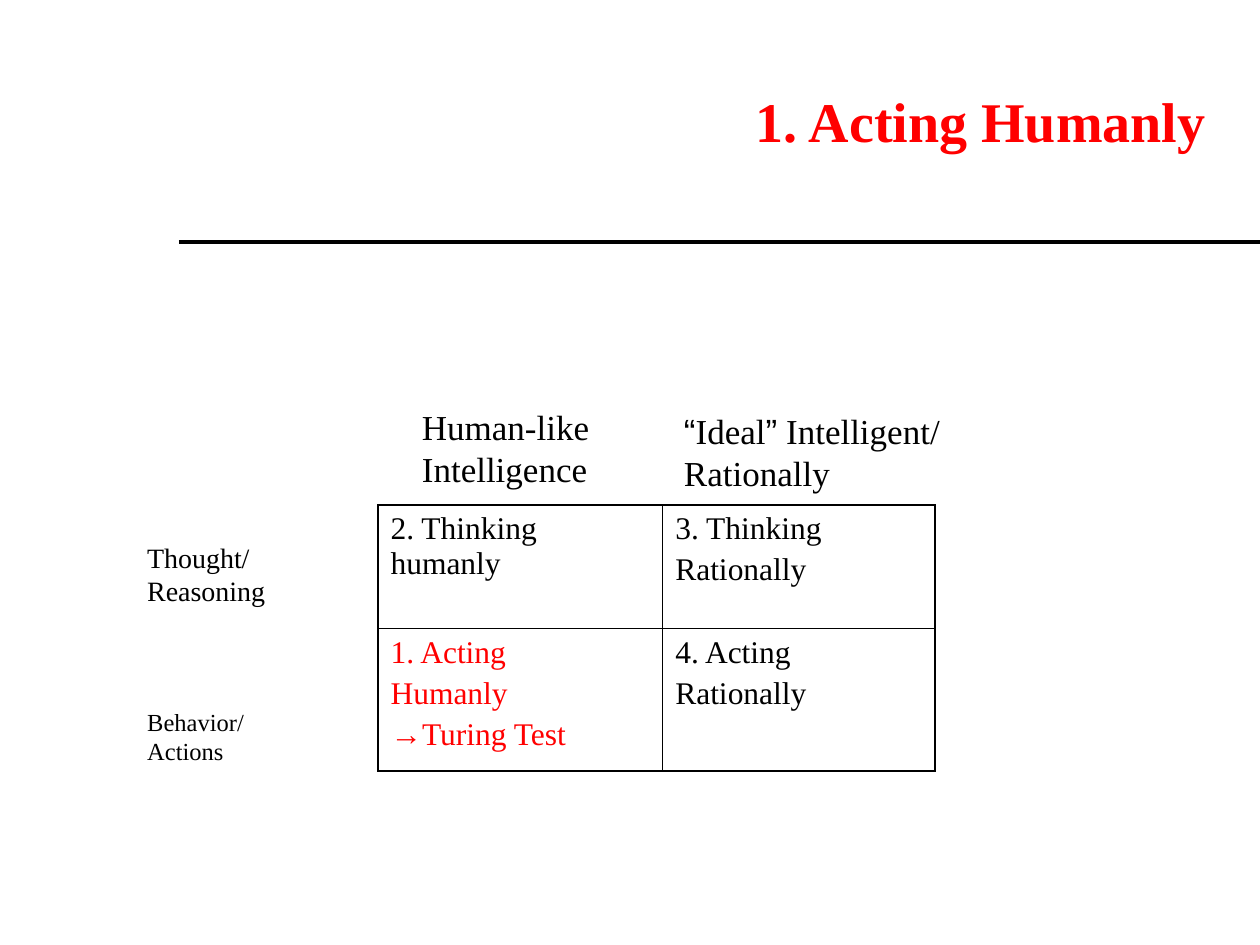
from dataclasses import dataclass
from itertools import groupby

from lxml.etree import SubElement
from pptx import Presentation
from pptx.dml.color import RGBColor
from pptx.enum.shapes import MSO_CONNECTOR as Connector
from pptx.enum.text import MSO_ANCHOR as Anchor, MSO_AUTO_SIZE as AutoSize, PP_ALIGN as Align
from pptx.oxml.ns import qn
from pptx.util import Inches, Pt


@dataclass(frozen=True)
class Theme:
    black: RGBColor = RGBColor(0, 0, 0)
    red: RGBColor = RGBColor(255, 0, 0)
    font: str = "Times New Roman"
    quote_font: str = "Arial"
    title: int = 32
    heading: int = 20
    cell: int = 18
    thought: int = 16
    behavior: int = 14


theme = Theme()


def write_text(frame, text, size, color=theme.black, bold=False, align=Align.LEFT, space_before=0):
    for index, line in enumerate(text.split("\n")):
        paragraph = frame.add_paragraph() if index else frame.paragraphs[0]
        paragraph.alignment = align
        paragraph.space_before = Pt(space_before)
        for is_quote, letters in groupby(line, key=lambda letter: letter in "“”"):
            run = paragraph.add_run()
            run.text = "".join(letters)
            run.font.name = theme.quote_font if is_quote else theme.font
            run.font.size = Pt(size)
            run.font.bold = bold
            run.font.color.rgb = color


def add_border(cell, side):
    line = SubElement(cell._tc.get_or_add_tcPr(), qn(f"a:{side}"), w=str(Pt(1)))
    fill = SubElement(line, qn("a:solidFill"))
    SubElement(fill, qn("a:srgbClr"), val=str(theme.black))


presentation = Presentation()
presentation.slide_width = Inches(10)
presentation.slide_height = Inches(7.5)
slide = presentation.slides.add_slide(presentation.slide_layouts[6])

rule = slide.shapes.add_connector(Connector.STRAIGHT, Inches(1.42), Inches(1.92), Inches(10), Inches(1.92))
rule.line.color.rgb = theme.black
rule.line.width = Pt(2.25)
SubElement(rule._element.spPr, qn("a:effectLst"))

title = slide.shapes.add_textbox(Inches(1.17), Inches(0.33), Inches(8.5), Inches(1.25))
title.text_frame.word_wrap = True
title.text_frame.vertical_anchor = Anchor.MIDDLE
write_text(title.text_frame, "1. Acting Humanly", theme.title, color=theme.red, bold=True, align=Align.RIGHT)

approaches = [
    [("2. Thinking humanly", theme.black), ("3. Thinking\nRationally", theme.black)],
    [("1. Acting\nHumanly\n→Turing Test", theme.red), ("4. Acting\nRationally", theme.black)],
]
table = slide.shapes.add_table(2, 2, Inches(3), Inches(4.01), Inches(4.42), Inches(2.11)).table
for column, width in zip(table.columns, (2.26, 2.16)):
    column.width = Inches(width)
for row, height in zip(table.rows, (0.98, 1.13)):
    row.height = Inches(height)
for row, contents in zip(table.rows, approaches):
    for cell, (text, color) in zip(row.cells, contents):
        write_text(cell.text_frame, text, theme.cell, color=color, space_before=3.6)
        for side in ("lnL", "lnR", "lnT", "lnB"):
            add_border(cell, side)
        cell.fill.background()

labels = [
    ("Thought/\nReasoning", 1.07, 4.24, 1.14, 0.64, theme.thought),
    ("Behavior/\nActions", 1.07, 5.56, 0.97, 0.57, theme.behavior),
    ("Human-like\nIntelligence", 3.25, 3.17, 1.53, 0.77, theme.heading),
    ("“Ideal” Intelligent/\nRationally", 5.33, 3.2, 2.28, 0.77, theme.heading),
]
for text, left, top, width, height, size in labels:
    label = slide.shapes.add_textbox(Inches(left), Inches(top), Inches(width), Inches(height))
    label.text_frame.word_wrap = False
    label.text_frame.auto_size = AutoSize.SHAPE_TO_FIT_TEXT
    write_text(label.text_frame, text, size)

presentation.save("out.pptx")
